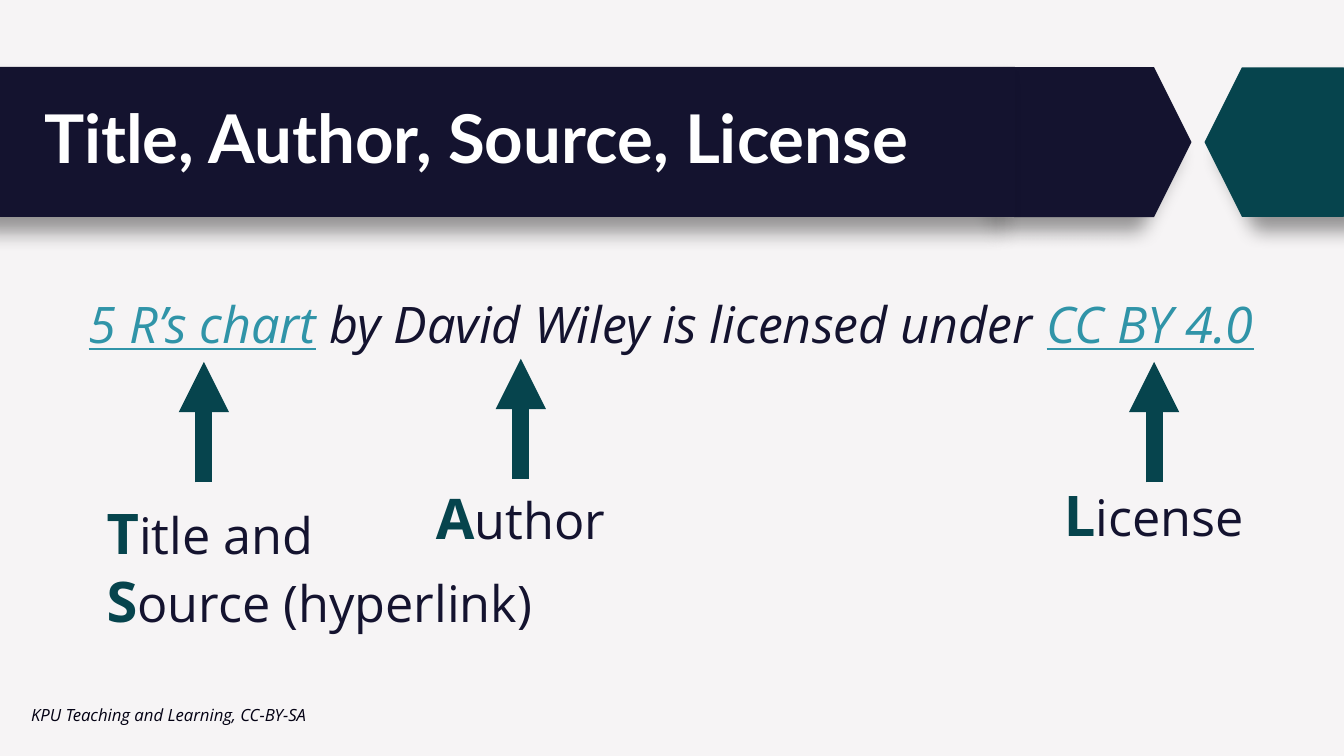
"""Build the attribution slide that labels title, author, source and license."""
from dataclasses import dataclass

import pptx
import pptx.dml.color
import pptx.enum.shapes
import pptx.enum.text
import pptx.oxml
import pptx.oxml.ns
import pptx.slide
import pptx.util

Pt = pptx.util.Pt
RGBColor = pptx.dml.color.RGBColor
Shape = pptx.enum.shapes.MSO_SHAPE
Align = pptx.enum.text.PP_ALIGN
Anchor = pptx.enum.text.MSO_ANCHOR

PAPER = RGBColor(0xF6, 0xF4, 0xF5)
NAVY = RGBColor(0x14, 0x13, 0x2F)
TEAL = RGBColor(0x06, 0x44, 0x4D)
LINK = RGBColor(0x30, 0x94, 0xA8)
WHITE = RGBColor(0xFF, 0xFF, 0xFF)
INK = RGBColor(0x03, 0x01, 0x13)

NAMESPACE = pptx.oxml.ns.nsdecls("a")
HEADING_FONT = "Lato"
BODY_FONT = "Open Sans"


@dataclass(frozen=True)
class Banner:
    kind: Shape
    left: float
    top: float
    width: float
    height: float
    color: RGBColor
    shadow_angle: int


@dataclass(frozen=True)
class Span:
    text: str
    format: dict
    color: RGBColor


@dataclass(frozen=True)
class Label:
    left: float
    top: float
    width: float
    height: float
    paragraphs: list[list[Span]]
    align: Align = Align.LEFT
    anchor: Anchor = Anchor.TOP
    line_spacing: float = 1.0


@dataclass(frozen=True)
class Arrow:
    x: float
    tip: float
    foot: float


TITLE = {"name": HEADING_FONT, "size": Pt(48), "bold": True}
FOOTER = {"name": BODY_FONT, "size": Pt(12), "italic": True}
CREDIT = {"name": BODY_FONT, "size": Pt(36), "italic": True}
CREDIT_LINK = CREDIT | {"underline": True}
INITIAL = {"name": BODY_FONT, "size": Pt(40), "bold": True}
REST = {"name": BODY_FONT, "size": Pt(36)}


def term(word: str) -> list[Span]:
    """Return a word whose first letter is emphasised."""
    return [Span(word[0], INITIAL, TEAL), Span(word[1:], REST, NAVY)]


BANNERS = [
    Banner(Shape.HEXAGON, 697.7, 48, 153.4, 107.2, NAVY, 135),
    Banner(Shape.RECTANGLE, -2.9, 47.8, 727.9, 107.2, NAVY, 135),
    Banner(Shape.HEXAGON, 860.4, 48.2, 126, 106.7, TEAL, 45),
]

LABELS = [
    Label(24.5, 59, 786.2, 85, [[Span("Title, Author, Source, License", TITLE, WHITE)]],
          anchor=Anchor.MIDDLE, line_spacing=0.9),
    Label(15.1, 496.1, 540.7, 28.8,
          [[Span("KPU Teaching and Learning, CC-BY-SA", FOOTER, INK)]],
          anchor=Anchor.MIDDLE),
    Label(41, 205.9, 877, 51.1, [[
        Span("5 R’s chart", CREDIT_LINK, LINK),
        Span(" by David Wiley is licensed under ", CREDIT, NAVY),
        Span("CC BY 4.0", CREDIT_LINK, LINK),
    ]], align=Align.CENTER),
    Label(69.1, 352.8, 368.6, 104.4, [term("Title and"), term("Source (hyperlink)")]),
    Label(296.6, 342, 150.5, 55.4, [term("Author")], align=Align.CENTER),
    Label(743.8, 339.8, 160.6, 55.4, [term("License")], align=Align.CENTER),
]

ARROWS = [
    Arrow(145.6, 258.5, 344.5),
    Arrow(372, 256.3, 342),
    Arrow(824.4, 258.5, 344.5),
]


def draw_banner(page: pptx.slide.Slide, banner: Banner) -> None:
    """Draw a filled banner piece with a soft shadow."""
    shape = page.shapes.add_shape(
        banner.kind, Pt(banner.left), Pt(banner.top), Pt(banner.width), Pt(banner.height))
    shape.fill.solid()
    shape.fill.fore_color.rgb = banner.color
    shape.line.fill.background()
    shape.shadow.inherit = False
    effects = shape._element.spPr.find(pptx.oxml.ns.qn("a:effectLst"))
    effects.append(pptx.oxml.parse_xml(
        f'<a:outerShdw {NAMESPACE} blurRad="{Pt(14)}" dist="{Pt(14)}" '
        f'dir="{banner.shadow_angle * 60000}" algn="ctr" rotWithShape="0">'
        '<a:srgbClr val="000000"><a:alpha val="40000"/></a:srgbClr></a:outerShdw>'))


def draw_label(page: pptx.slide.Slide, label: Label) -> None:
    """Draw a text box with its formatted spans."""
    box = page.shapes.add_textbox(
        Pt(label.left), Pt(label.top), Pt(label.width), Pt(label.height))
    frame = box.text_frame
    frame.word_wrap = True
    frame.vertical_anchor = label.anchor
    for index, spans in enumerate(label.paragraphs):
        para = frame.add_paragraph() if index else frame.paragraphs[0]
        para.alignment = label.align
        para.line_spacing = label.line_spacing
        for item in spans:
            span = para.add_run()
            span.text = item.text
            for attribute, value in item.format.items():
                setattr(span.font, attribute, value)
            span.font.color.rgb = item.color


def draw_arrow(page: pptx.slide.Slide, arrow: Arrow) -> None:
    """Draw a thick arrow that points up."""
    connector = page.shapes.add_connector(
        pptx.enum.shapes.MSO_CONNECTOR.STRAIGHT,
        Pt(arrow.x), Pt(arrow.foot), Pt(arrow.x), Pt(arrow.tip))
    connector.line.width = Pt(12)
    connector.line.color.rgb = TEAL
    connector.line._get_or_add_ln().append(
        pptx.oxml.parse_xml(f'<a:tailEnd {NAMESPACE} type="triangle"/>'))
    connector._element.spPr.append(
        pptx.oxml.parse_xml(f"<a:effectLst {NAMESPACE}/>"))


def main() -> None:
    """Build the deck and save it."""
    deck = pptx.Presentation()
    deck.slide_width, deck.slide_height = Pt(960), Pt(540)
    page = deck.slides.add_slide(deck.slide_layouts[6])
    page.background.fill.solid()
    page.background.fill.fore_color.rgb = PAPER
    for banner in BANNERS:
        draw_banner(page, banner)
    for label in LABELS:
        draw_label(page, label)
    for arrow in ARROWS:
        draw_arrow(page, arrow)
    deck.save("out.pptx")


if __name__ == "__main__":
    main()
